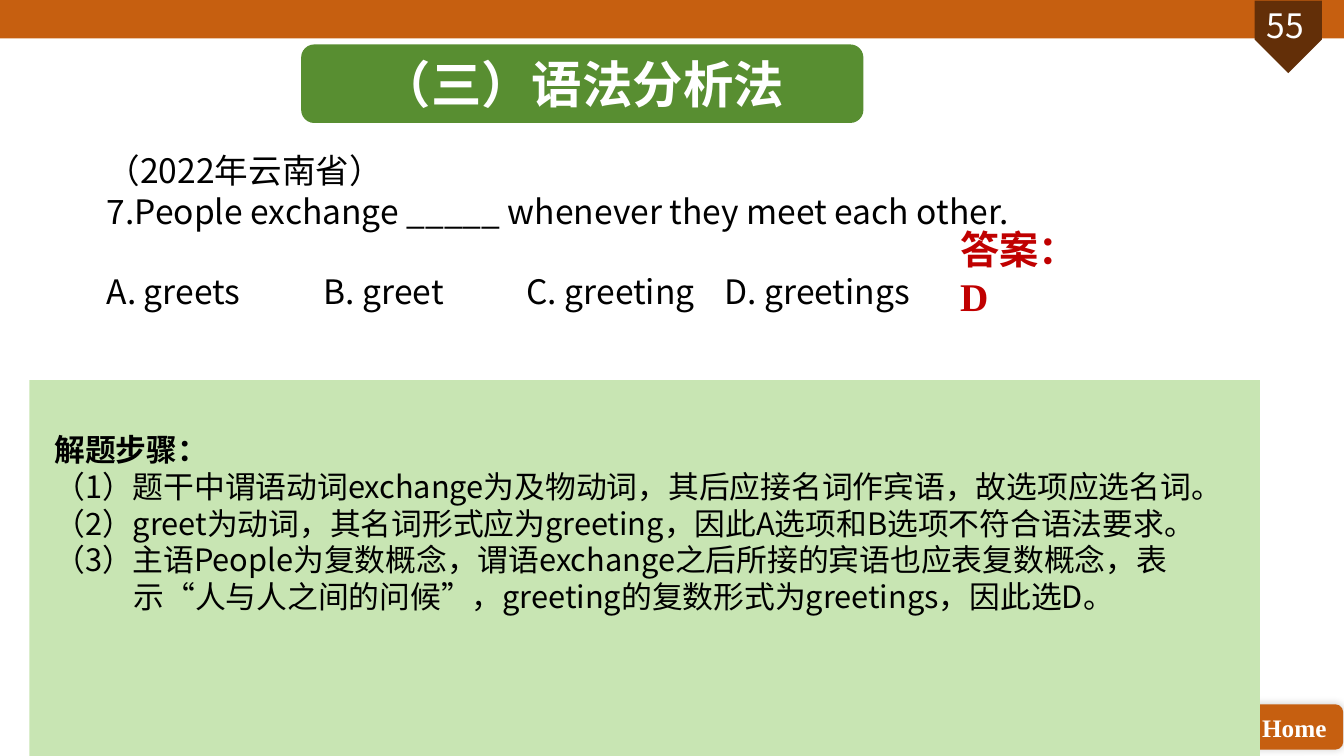
from lxml import etree
from pptx import Presentation
from pptx.dml.color import RGBColor
from pptx.enum.shapes import MSO_SHAPE
from pptx.enum.text import MSO_ANCHOR, PP_ALIGN
from pptx.oxml.ns import qn
from pptx.util import Cm, Pt

RECT, ROUND, PLATE = MSO_SHAPE.RECTANGLE, MSO_SHAPE.ROUNDED_RECTANGLE, MSO_SHAPE.PENTAGON
CENTER, LEFT = PP_ALIGN.CENTER, PP_ALIGN.LEFT
SANS, SERIF = "Noto Sans CJK SC", "Times New Roman"
ORANGE, BROWN, GREEN, PALE = "C65F10", "632F08", "588E31", "C8E5B3"
WHITE, BLACK, RED = "FFFFFF", "000000", "C00000"

PAGE_NUMBER = "55"
HOME = "Home"
TITLE = "（三）语法分析法"
QUESTION = [
    "（2022年云南省）",
    "7.People exchange _____ whenever they meet each other.",
]
OPTIONS = ["A. greets", "B. greet", "C. greeting", "D. greetings"]
OPTION_STOPS = [5.47, 10.58, 15.57]  # cm from the text edge
ANSWER = "答案：D"
STEPS_HEADING = "解题步骤："
STEPS = [
    "（1）题干中谓语动词exchange为及物动词，其后应接名词作宾语，故选项应选名词。",
    "（2）greet为动词，其名词形式应为greeting，因此A选项和B选项不符合语法要求。",
    "（3）主语People为复数概念，谓语exchange之后所接的宾语也应表复数概念，"
    "表示“人与人之间的问候”，greeting的复数形式为greetings，因此选D。",
]


def rgb(color):
    return RGBColor.from_string(color)


def add_block(slide, kind, box, fill):
    sp = slide.shapes.add_shape(kind, *map(Cm, box))
    sp.shadow.inherit = False
    sp.fill.solid()
    sp.fill.fore_color.rgb = rgb(fill)
    sp.line.fill.background()
    return sp


def add_box(slide, box):
    sp = slide.shapes.add_textbox(*map(Cm, box))
    sp.text_frame.word_wrap = True
    return sp


def write(sp, lines, font, size, color, bold=False, align=LEFT, spacing=None):
    """Fill a shape with one paragraph per line and return the paragraphs."""
    tf = sp.text_frame
    for i, line in enumerate(lines):
        p = tf.paragraphs[0] if i == 0 else tf.add_paragraph()
        p.alignment = align
        if spacing:
            p.line_spacing = spacing
        r = p.add_run()
        r.text = line
        for name, value in {"name": font, "size": Pt(size), "bold": bold}.items():
            setattr(r.font, name, value)
        r.font.color.rgb = rgb(color)
        etree.SubElement(r.font._element, qn("a:ea"), typeface=SANS)
    return tf.paragraphs


def set_tabs(p, stops):
    tabs = etree.SubElement(p._p.get_or_add_pPr(), qn("a:tabLst"))
    for stop in stops:
        etree.SubElement(tabs, qn("a:tab"), pos=str(Cm(stop)), algn="l")


def add_soft_shadow(sp):
    effects = sp._element.spPr.find(qn("a:effectLst"))
    shadow = etree.SubElement(effects, qn("a:outerShdw"), blurRad=str(Pt(6)),
                              dist="0", dir="18900000")
    black = etree.SubElement(shadow, qn("a:srgbClr"), val=BLACK)
    etree.SubElement(black, qn("a:alpha"), val="20000")


def main():
    prs = Presentation()
    prs.slide_width, prs.slide_height = Cm(33.87), Cm(19.05)
    slide = prs.slides.add_slide(prs.slide_layouts[6])

    add_block(slide, RECT, (0, 0, 33.87, 0.97), ORANGE)
    add_block(slide, PLATE, (31.55, 0.08, 1.83, 1.7), BROWN).rotation = 90
    number = add_box(slide, (31.15, 0, 2.49, 1.27))
    write(number, [PAGE_NUMBER], SANS, 24, WHITE, align=CENTER, spacing=Pt(28.8))

    home = add_block(slide, ROUND, (31.39, 17.75, 2.46, 1.14), ORANGE)
    add_soft_shadow(home)
    write(home, [HOME], SERIF, 18, WHITE, bold=True, align=CENTER)
    title = add_block(slide, ROUND, (7.59, 1.12, 14.17, 1.98), GREEN)
    write(title, [TITLE], "Calibri", 36, WHITE, bold=True, align=CENTER)
    for sp in (home, title):
        sp.text_frame.vertical_anchor = MSO_ANCHOR.MIDDLE

    question = add_box(slide, (2.44, 3.66, 29.92, 4.37))
    lines = QUESTION + ["\t".join(OPTIONS)]
    options = write(question, lines, SANS, 24, BLACK, spacing=Pt(28.8))[-1]
    options.space_before = Pt(28.8)
    set_tabs(options, OPTION_STOPS)

    answer = add_box(slide, (23.95, 5.56, 3.6, 2.6))
    write(answer, [ANSWER], SERIF, 28, RED, bold=True)

    add_block(slide, RECT, (0.74, 9.58, 31.01, 9.47), PALE)
    steps = add_box(slide, (1.12, 10.72, 30.63, 4.95))
    paragraphs = write(steps, [STEPS_HEADING] + STEPS, SANS, 22, BLACK, spacing=Pt(26.4))
    paragraphs[0].runs[0].font.bold = True
    for p in paragraphs:
        pPr = p._p.get_or_add_pPr()
        pPr.set("marL", str(Cm(2)))
        pPr.set("indent", str(Cm(-2)))

    prs.save("out.pptx")


if __name__ == "__main__":
    main()
